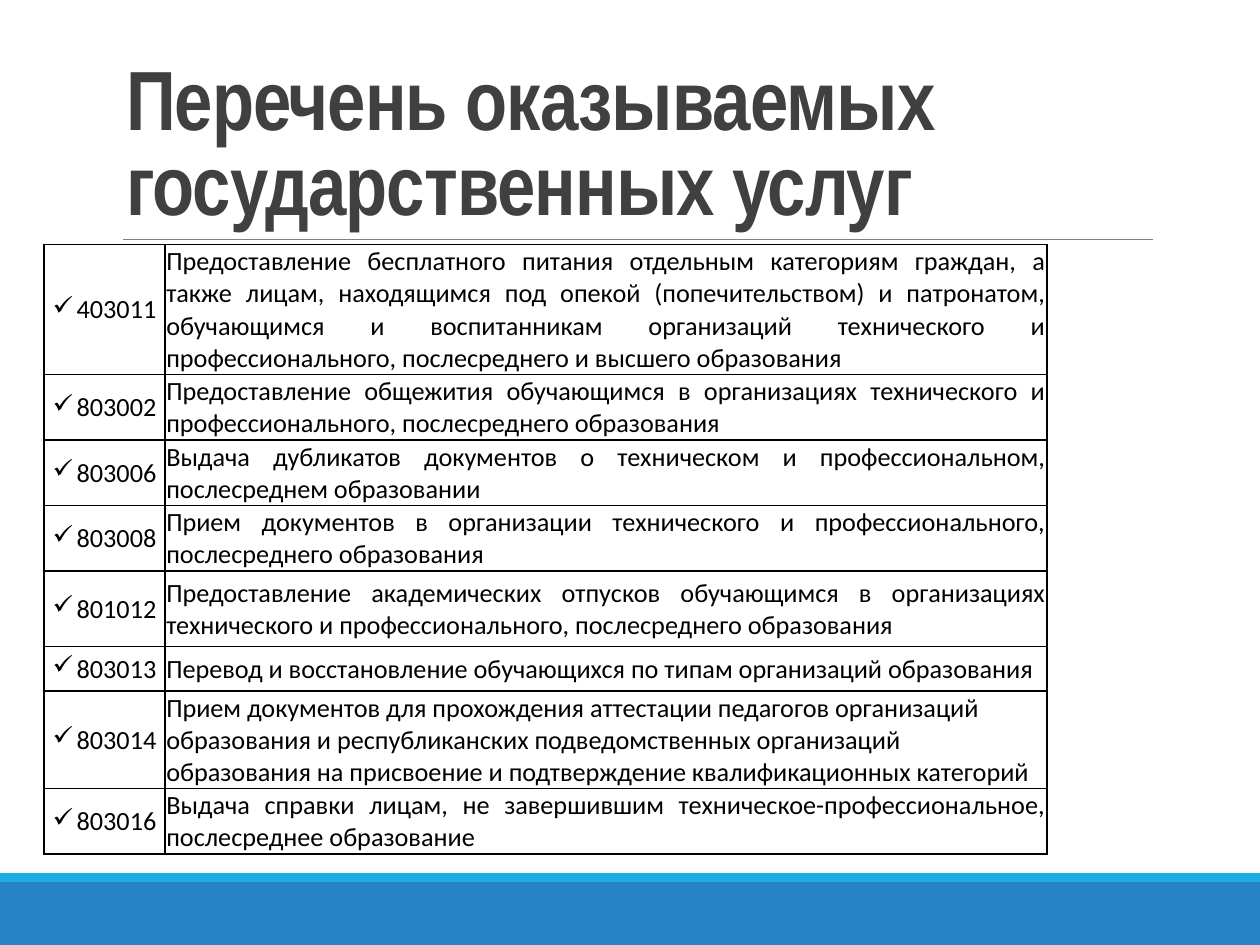
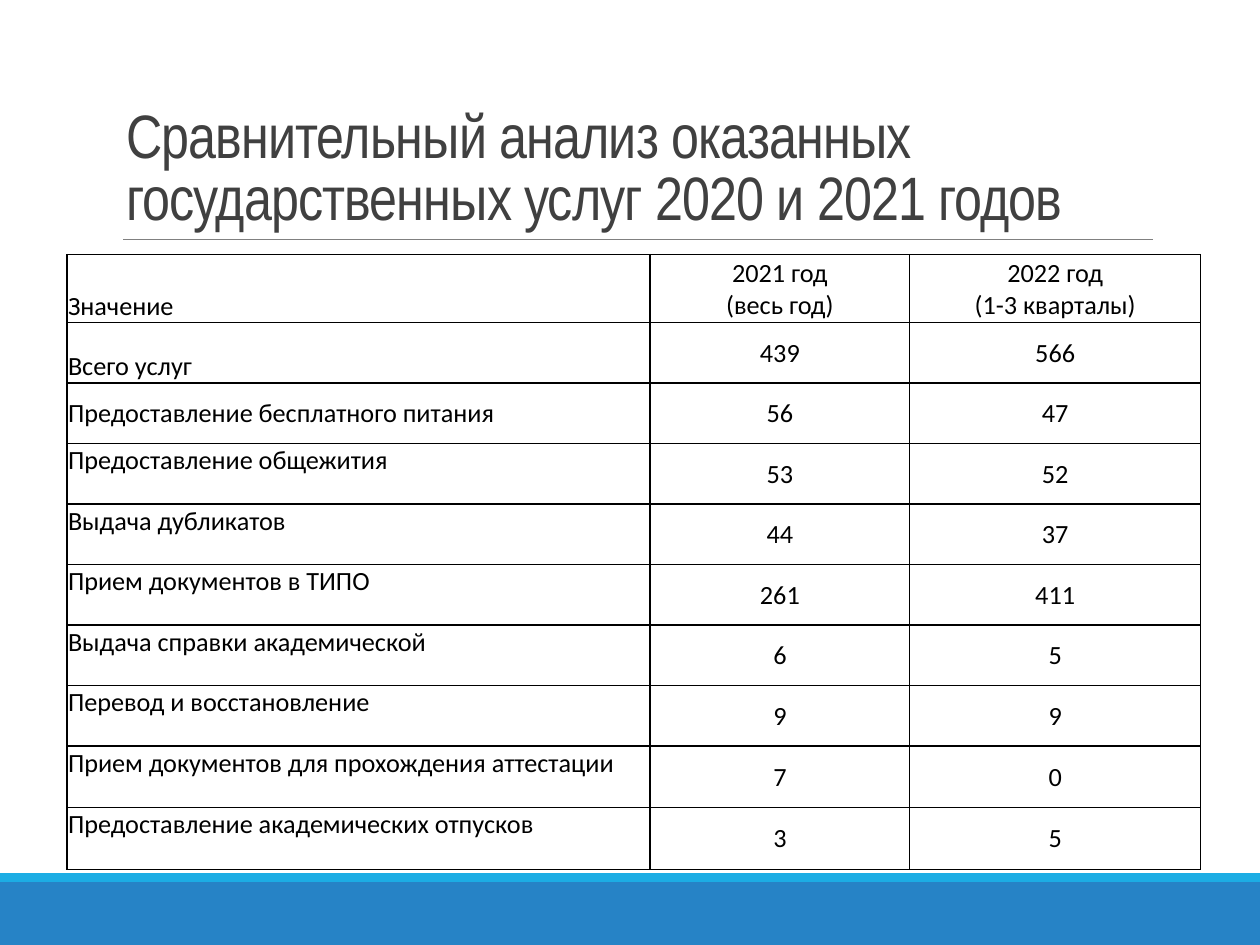
from lxml import etree
from pptx import Presentation
from pptx.dml.color import RGBColor
from pptx.enum.shapes import MSO_CONNECTOR, MSO_SHAPE
from pptx.enum.text import MSO_ANCHOR, MSO_AUTO_SIZE, PP_ALIGN
from pptx.oxml import parse_xml
from pptx.oxml.ns import nsdecls, qn
from pptx.util import Inches, Pt

LEFT, CENTER, JUSTIFY = PP_ALIGN.LEFT, PP_ALIGN.CENTER, PP_ALIGN.JUSTIFY
TOP, MIDDLE, BOTTOM = MSO_ANCHOR.TOP, MSO_ANCHOR.MIDDLE, MSO_ANCHOR.BOTTOM

BLUE = RGBColor(0x26, 0x83, 0xC6)
SKY = RGBColor(0x1C, 0xAD, 0xE4)
GREY = RGBColor(0x80, 0x80, 0x80)
DARK = RGBColor(0x40, 0x40, 0x40)
BLACK = RGBColor(0, 0, 0)

TITLE_FONT, BODY_FONT = "Arial Narrow", "Calibri"
TITLE_ONLY = 5

SERVICES = [
    ("403011", "Предоставление бесплатного питания отдельным категориям граждан, "
     "а также лицам, находящимся под опекой (попечительством) и патронатом, "
     "обучающимся и воспитанникам организаций технического и профессионального, "
     "послесреднего и высшего образования", JUSTIFY),
    ("803002", "Предоставление общежития обучающимся в организациях технического "
     "и профессионального, послесреднего образования", JUSTIFY),
    ("803006", "Выдача дубликатов документов о техническом и профессиональном, "
     "послесреднем образовании", JUSTIFY),
    ("803008", "Прием документов в организации технического и профессионального, "
     "послесреднего образования", JUSTIFY),
    ("801012", "Предоставление академических отпусков обучающимся в организациях "
     "технического и профессионального, послесреднего образования", JUSTIFY),
    ("803013", "Перевод и восстановление обучающихся по типам организаций "
     "образования", JUSTIFY),
    ("803014", "Прием документов для прохождения аттестации педагогов организаций "
     "образования и республиканских подведомственных организаций образования "
     "на присвоение и подтверждение квалификационных категорий", LEFT),
    ("803016", "Выдача справки лицам, не завершившим "
     "техническое-профессиональное, послесреднее образование", JUSTIFY),
]
SERVICE_ROWS = [0.9, 0.51, 0.37, 0.37, 0.6, 0.35, 0.74, 0.42]

COMPARISON = [
    ("Значение", "2021 год\n(весь год)", "2022 год\n(1-3 кварталы)", BOTTOM),
    ("Всего услуг", "439", "566", BOTTOM),
    ("Предоставление бесплатного питания", "56", "47", MIDDLE),
    ("Предоставление общежития", "53", "52", TOP),
    ("Выдача дубликатов", "44", "37", TOP),
    ("Прием документов в ТИПО", "261", "411", TOP),
    ("Выдача справки академической", "6", "5", TOP),
    ("Перевод и восстановление", "9", "9", TOP),
    ("Прием документов для прохождения аттестации", "7", "0", TOP),
    ("Предоставление академических отпусков", "3", "5", TOP),
]
COMPARISON_ROWS = [0.54] + [0.48] * 7 + [0.49] * 2


def add_grid(page, left, top, columns, rows):
    """Add an unstyled table with the given column widths and row heights."""
    table = page.shapes.add_table(
        len(rows), len(columns), Inches(left), Inches(top),
        Inches(sum(columns)), Inches(sum(rows))).table
    table.first_row = table.horz_banding = False
    for column, width in zip(table.columns, columns):
        column.width = Inches(width)
    for row, height in zip(table.rows, rows):
        row.height = Inches(height)
    return table


def fill_cell(cell, text, align, anchor=MIDDLE, bullet=None):
    """Write text into a cell with black borders and tight margins."""
    cell.margin_left = cell.margin_right = cell.margin_top = Inches(0.01)
    cell.margin_bottom = 0
    cell.vertical_anchor = anchor
    for side in ("lnL", "lnR", "lnT", "lnB"):
        cell._tc.get_or_add_tcPr().append(parse_xml(
            f'<a:{side} {nsdecls("a")} w="{Pt(1)}"><a:solidFill>'
            f'<a:srgbClr val="{BLACK}"/></a:solidFill></a:{side}>'))
    cell.fill.background()
    cell.text = text
    for para in cell.text_frame.paragraphs:
        para.alignment = align
        if bullet:
            settings = para._p.get_or_add_pPr()
            settings.set("marL", str(Inches(0.19)))
            settings.set("indent", str(-Inches(0.19)))
            etree.SubElement(settings, qn("a:buChar"), char=bullet)
        para.font.name = BODY_FONT
        para.font.size = Pt(15)
        para.font.color.rgb = BLACK


deck = Presentation()
deck.slide_width, deck.slide_height = Inches(10), Inches(7.5)
layout = deck.slide_layouts[TITLE_ONLY]

# Pages with their titles
pages = []
for title_text, size, bold in (
        ("Перечень оказываемых государственных услуг", 48, True),
        ("Сравнительный анализ оказанных государственных услуг 2020 и 2021 годов",
         35, False)):
    page = deck.slides.add_slide(layout)
    pages.append(page)
    title = page.shapes.title
    title.left, title.top = Inches(0.9), Inches(0.31)
    title.width, title.height = Inches(8.25), Inches(1.59)
    frame = title.text_frame
    frame.auto_size = MSO_AUTO_SIZE.NONE
    frame.vertical_anchor = BOTTOM
    para = frame.paragraphs[0]
    para.alignment = LEFT
    para.line_spacing = 0.85
    span = para.add_run()
    span.text = title_text
    span.font.name = TITLE_FONT
    span.font.size = Pt(size)
    span.font.bold = bold
    span.font.color.rgb = DARK
    span._r.get_or_add_rPr().set("spc", "-50")

# Footer bands and title rule, drawn once and moved to the shared layout
shapes = pages[0].shapes
shared = []
for top, height, color in ((7, 0.5, BLUE), (6.93, 0.07, SKY)):
    band = shapes.add_shape(MSO_SHAPE.RECTANGLE, 0, Inches(top),
                            deck.slide_width, Inches(height))
    band.shadow.inherit = False
    band.fill.solid()
    band.fill.fore_color.rgb = color
    band.line.fill.background()
    shared.append(band)
rule = shapes.add_connector(MSO_CONNECTOR.STRAIGHT, Inches(0.98), Inches(1.9),
                            Inches(9.15), Inches(1.9))
rule.line.color.rgb = GREY
rule.line.width = Pt(0.5)
etree.SubElement(rule.element.spPr, qn("a:effectLst"))
shared.append(rule)
for number, shape in enumerate(shared):
    shape.element.xpath(".//p:cNvPr")[0].set("id", str(100 + number))
    layout.shapes.element.insert(2 + number, shape.element)

# List of services
table = add_grid(pages[0], 0.35, 1.94, [0.96, 7], SERVICE_ROWS)
for row, (code, service, align) in enumerate(SERVICES):
    fill_cell(table.cell(row, 0), code, CENTER, bullet="✓")
    fill_cell(table.cell(row, 1), service, align)

# Comparison of the two years
table = add_grid(pages[1], 0.53, 2.02, [4.63, 2.06, 2.31], COMPARISON_ROWS)
for row, (name, *years, anchor) in enumerate(COMPARISON):
    fill_cell(table.cell(row, 0), name, LEFT, anchor)
    for column, value in enumerate(years, start=1):
        fill_cell(table.cell(row, column), value, CENTER)

deck.save("out.pptx")
